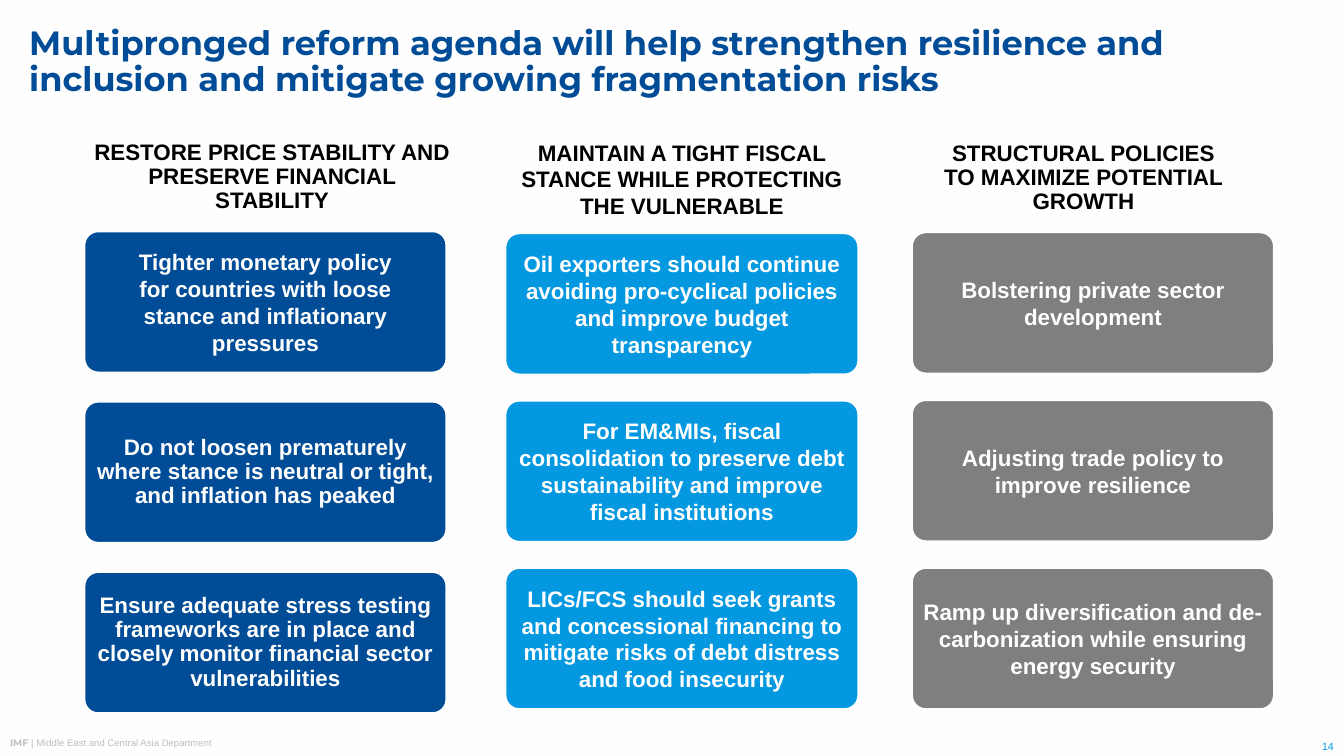
from pptx import Presentation
from pptx.dml.color import RGBColor
from pptx.enum.shapes import MSO_SHAPE
from pptx.enum.text import MSO_ANCHOR, MSO_AUTO_SIZE, PP_ALIGN
from pptx.util import Inches, Pt

WIDTH, HEIGHT = Inches(13.33), Inches(7.5)
COLUMNS, ROWS = 40, 30
CARD_ROWS = 5.64
PAD, WIDE_PAD = 0.21, 1.02
WHITE, NAVY, SKY, GRAY = "FEFEFE", "004C97", "0498E0", "7F7F7F"

PILLARS = [
    dict(left=2.5, span=10.8, top=9.16, pitch=6.76, fill=NAVY,
         heading="RESTORE PRICE STABILITY AND PRESERVE FINANCIAL STABILITY",
         box=(2.46, 5.96, 11.28, 2.16), heading_spacing=0.9,
         cards=[
             ("Tighter monetary policy for countries with loose stance and "
              "inflationary pressures", 1.0, WIDE_PAD),
             ("Do not loosen prematurely where stance is neutral or tight, "
              "and inflation has peaked", 0.9, PAD),
             ("Ensure adequate stress testing frameworks are in place and "
              "closely monitor financial sector vulnerabilities", 0.9, PAD),
         ]),
    dict(left=15.03, span=10.53, top=9.24, pitch=6.64, fill=SKY,
         heading="MAINTAIN A TIGHT FISCAL STANCE WHILE PROTECTING THE VULNERABLE",
         box=(15.06, 5.36, 10.47, 3.48), heading_spacing=1.0,
         cards=[
             ("Oil exporters should continue avoiding pro-cyclical policies "
              "and improve budget transparency", 1.0, PAD),
             ("For EM&MIs, fiscal consolidation to preserve debt "
              "sustainability and improve fiscal institutions", 1.0, PAD),
             ("LICs/FCS should seek grants and concessional financing to "
              "mitigate risks of debt distress and food insecurity", 1.0, PAD),
         ]),
    dict(left=27.13, span=10.8, top=9.2, pitch=6.66, fill=GRAY,
         heading="STRUCTURAL POLICIES TO MAXIMIZE POTENTIAL GROWTH",
         box=(27.76, 5.96, 8.97, 2.24), heading_spacing=0.9,
         cards=[
             ("Bolstering private sector development", 1.0, PAD),
             ("Adjusting trade policy to improve resilience", 1.0, PAD),
             ("Ramp up diversification and de-carbonization while ensuring "
              "energy security", 1.0, PAD),
         ]),
]


def col(n):
    return round(WIDTH * n / COLUMNS)


def row(n):
    return round(HEIGHT * n / ROWS)


def area(left, top, span, depth):
    return col(left), row(top), col(span), row(depth)


def color(target, value):
    target.rgb = RGBColor.from_string(value)


def fill_with(fill, value):
    fill.solid()
    color(fill.fore_color, value)


def write(s, *runs, size=16, ink=WHITE, font="Arial", bold=True, spacing=1.0,
          align=PP_ALIGN.CENTER, anchor=MSO_ANCHOR.MIDDLE, pad=(PAD, 0.28)):
    tf = s.text_frame
    tf.word_wrap = True
    tf.auto_size = MSO_AUTO_SIZE.NONE
    tf.vertical_anchor = anchor
    tf.margin_left = tf.margin_right = col(pad[0])
    tf.margin_top = tf.margin_bottom = row(pad[1])
    p = tf.paragraphs[0]
    p.alignment = align
    p.line_spacing = spacing
    p.space_before = Pt(0)
    for text, *face in runs:
        r = p.add_run()
        r.text = text
        r.font.name, r.font.bold = face or (font, bold)
        r.font.size = Pt(size)
        color(r.font.color, ink)


def add_title(s, text):
    title = s.shapes.title
    title.left, title.top, title.width, title.height = area(0.87, 1.04, 36.28, 2.88)
    write(title, (text,), size=24, ink=NAVY, font="Montserrat", spacing=0.9,
          align=PP_ALIGN.LEFT, pad=(0, 0))


def add_label(s, place, *runs, **style):
    write(s.shapes.add_textbox(*area(*place)), *runs, **style)


def add_card(s, place, fill, text, spacing, pad):
    sp = s.shapes.add_shape(MSO_SHAPE.ROUNDED_RECTANGLE, *area(*place))
    sp.adjustments[0] = 0.1
    sp.shadow.inherit = False
    fill_with(sp.fill, fill)
    color(sp.line.color, WHITE)
    sp.line.width = Pt(2)
    write(sp, (text,), spacing=spacing, pad=(pad, 0.28))


def add_pillar(s, pillar):
    add_label(s, pillar["box"], (pillar["heading"],), ink="000000",
              spacing=pillar["heading_spacing"])
    for i, card in enumerate(pillar["cards"]):
        top = pillar["top"] + i * pillar["pitch"]
        add_card(s, (pillar["left"], top, pillar["span"], CARD_ROWS),
                 pillar["fill"], *card)


def main():
    prs = Presentation()
    prs.slide_width, prs.slide_height = WIDTH, HEIGHT
    s = prs.slides.add_slide(prs.slide_layouts[5])
    fill_with(s.background.fill, WHITE)
    add_title(s, "Multipronged reform agenda will help strengthen resilience "
                 "and inclusion and mitigate growing fragmentation risks")
    for pillar in PILLARS:
        add_pillar(s, pillar)
    add_label(s, (0, 29.04, 30, 0.84), ("IMF ", "Montserrat", True),
              ("| Middle East and Central Asia Department", "Arial", False),
              size=6.8, ink="BEBEBE", align=PP_ALIGN.LEFT,
              anchor=MSO_ANCHOR.TOP, pad=(0.3, 0.2))
    add_label(s, (36.04, 29.16, 3.96, 0.92), ("14",), size=7.5, ink="009CDE",
              bold=False, align=PP_ALIGN.RIGHT, anchor=MSO_ANCHOR.BOTTOM,
              pad=(0.3, 0.2))
    prs.save("out.pptx")


if __name__ == "__main__":
    main()
